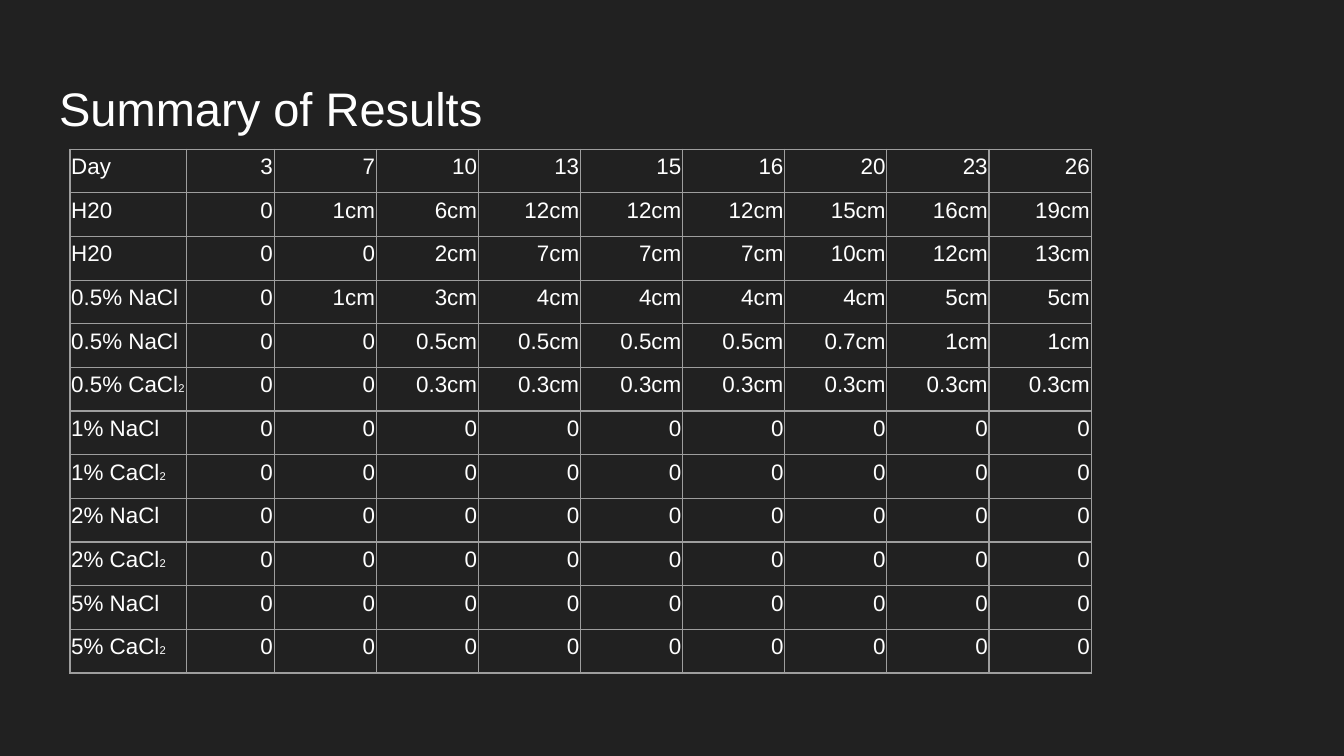
from lxml import etree
from pptx import Presentation
from pptx.dml.color import RGBColor
from pptx.enum.text import MSO_ANCHOR, PP_ALIGN
from pptx.oxml.ns import qn
from pptx.util import Inches, Pt

BOTTOM = MSO_ANCHOR.BOTTOM
LEFT, RIGHT = PP_ALIGN.LEFT, PP_ALIGN.RIGHT
TITLE_ONLY = 5

DAYS = ["3", "7", "10", "13", "15", "16", "20", "23", "26"]
NO_GROWTH = ["0"] * len(DAYS)
GROWTH = [
    ["Day", *DAYS],
    ["H20", "0", "1cm", "6cm", "12cm", "12cm", "12cm", "15cm", "16cm", "19cm"],
    ["H20", "0", "0", "2cm", "7cm", "7cm", "7cm", "10cm", "12cm", "13cm"],
    ["0.5% NaCl", "0", "1cm", "3cm", "4cm", "4cm", "4cm", "4cm", "5cm", "5cm"],
    ["0.5% NaCl", "0", "0", *["0.5cm"] * 4, "0.7cm", "1cm", "1cm"],
    ["0.5% CaCl2", "0", "0", *["0.3cm"] * 7],
]
for strength in ("1%", "2%", "5%"):
    for salt in ("NaCl", "CaCl2"):
        GROWTH.append([f"{strength} {salt}", *NO_GROWTH])


def color(value):
    return RGBColor.from_string(value)


class SlideBuilder:
    font = "Arial"
    text_color = "FFFFFF"
    border_color = "9E9E9E"
    background = "212121"

    def __init__(self, deck):
        self.page = deck.slides.add_slide(deck.slide_layouts[TITLE_ONLY])
        fill = self.page.background.fill
        fill.solid()
        fill.fore_color.rgb = color(self.background)

    def style(self, span, size):
        span.font.name = self.font
        span.font.size = Pt(size)
        span.font.color.rgb = color(self.text_color)

    def title(self, text, left, top, width, height, size):
        box = self.page.shapes.title
        box.left, box.top = Inches(left), Inches(top)
        box.width, box.height = Inches(width), Inches(height)
        frame = box.text_frame
        frame.text = text
        frame.vertical_anchor = BOTTOM
        frame.margin_left = frame.margin_right = Inches(0.1)
        frame.margin_top = frame.margin_bottom = Inches(0.1)
        para = frame.paragraphs[0]
        para.alignment = LEFT
        self.style(para.runs[0], size)

    def table(self, rows, left, top, widths, row_height, size):
        table = self.page.shapes.add_table(
            len(rows), len(widths), Inches(left), Inches(top),
            Inches(sum(widths)), Inches(row_height * len(rows))).table
        table.first_row = table.horz_banding = False
        for column, width in zip(table.columns, widths):
            column.width = Inches(width)
        for row_index, row in enumerate(rows):
            for column_index, text in enumerate(row):
                cell = table.cell(row_index, column_index)
                self.cell(cell, text, size, is_label=column_index == 0)

    def cell(self, cell, text, size, is_label):
        cell.vertical_anchor = BOTTOM
        cell.margin_left = cell.margin_right = cell.margin_top = Inches(0.01)
        cell.margin_bottom = Inches(0.1)
        self.borders(cell)
        cell.fill.background()
        para = cell.text_frame.paragraphs[0]
        para.alignment = LEFT if is_label else RIGHT
        if not is_label:
            para.line_spacing = 1.15
        # The formula's closing digit is set at half size
        formula = text.endswith("CaCl2")
        para.text = text[:-1] if formula else text
        self.style(para.runs[0], size)
        if formula:
            digit = para.add_run()
            digit.text = text[-1]
            self.style(digit, size / 2)

    def borders(self, cell):
        properties = cell._tc.get_or_add_tcPr()
        for side in ("a:lnL", "a:lnR", "a:lnT", "a:lnB"):
            line = etree.SubElement(properties, qn(side), w=str(Pt(0.75)))
            fill = etree.SubElement(line, qn("a:solidFill"))
            etree.SubElement(fill, qn("a:srgbClr"), val=self.border_color)


def main():
    # Widescreen page, 16:9
    deck = Presentation()
    deck.slide_width, deck.slide_height = Inches(10), Inches(10 * 9 / 16)
    slide = SlideBuilder(deck)

    # Heading
    slide.title("Summary of Results", 0.34, 0.48, 9.32, 0.63, size=25.2)

    # Growth by solution and day
    widths = [0.87, 0.65] + [0.76] * 8
    slide.table(GROWTH, 0.52, 1.11, widths, row_height=0.32, size=12)

    deck.save("out.pptx")


if __name__ == "__main__":
    main()
